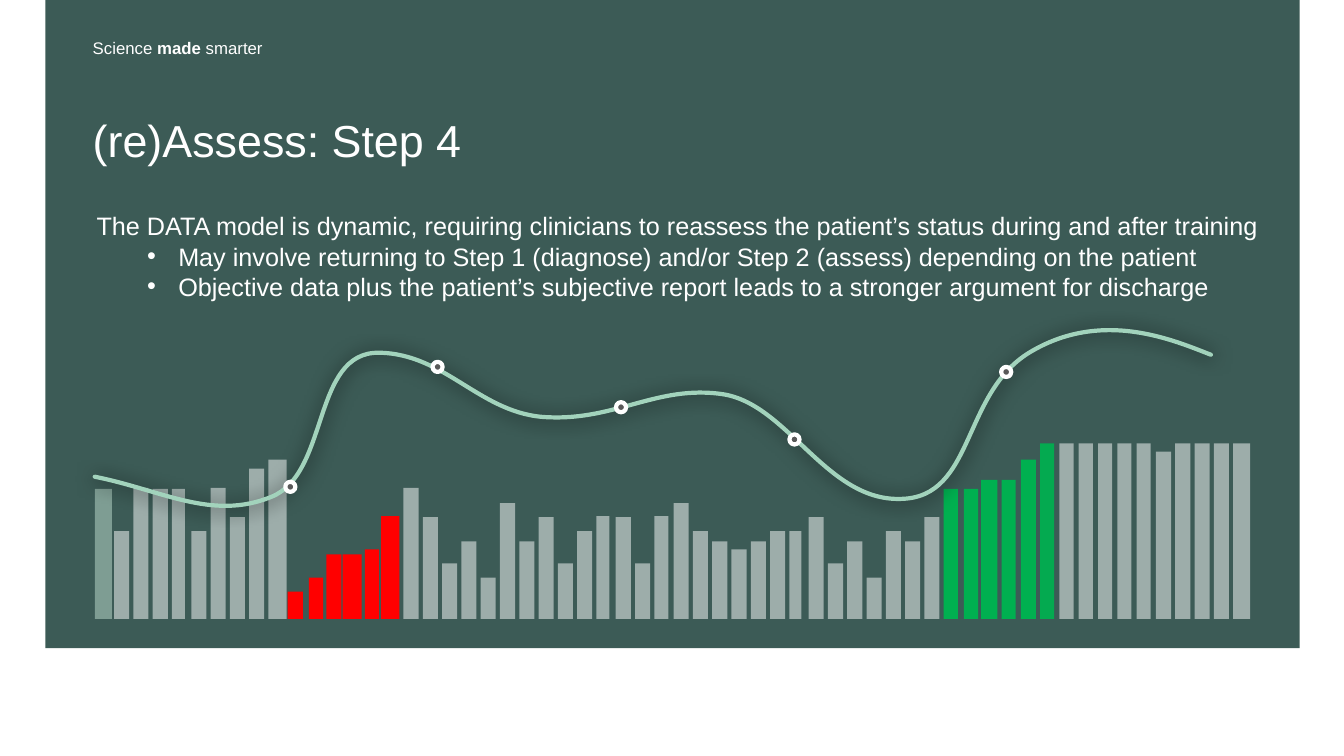
from lxml import etree
from pptx import Presentation
from pptx.dml.color import RGBColor
from pptx.enum.shapes import MSO_SHAPE
from pptx.enum.text import MSO_ANCHOR, MSO_AUTO_SIZE
from pptx.oxml import parse_xml
from pptx.oxml.ns import nsdecls, qn
from pptx.util import Inches, Pt

RECT, OVAL = MSO_SHAPE.RECTANGLE, MSO_SHAPE.OVAL
TOP, MIDDLE = MSO_ANCHOR.TOP, MSO_ANCHOR.MIDDLE
FIT_SHAPE = MSO_AUTO_SIZE.SHAPE_TO_FIT_TEXT

WHITE = RGBColor(0xFF, 0xFF, 0xFF)
DARK_GREEN = RGBColor(0x3C, 0x5B, 0x56)
PALE_GREEN = RGBColor(0xC0, 0xE0, 0xD0)
MINT = RGBColor(0xA2, 0xD3, 0xBC)
RED = RGBColor(0xFF, 0x00, 0x00)
GREEN = RGBColor(0x00, 0xB0, 0x50)
GREY = RGBColor(0x59, 0x59, 0x59)

prs = Presentation()
prs.slide_width, prs.slide_height = Inches(13.33), Inches(7.5)
s = prs.slides.add_slide(prs.slide_layouts[6])


def add_shape(shapes, kind, x, y, w, h, color, opacity=100):
    sp = shapes.add_shape(kind, Inches(x), Inches(y), Inches(w), Inches(h))
    sp.shadow.inherit = False
    sp.fill.solid()
    sp.fill.fore_color.rgb = color
    sp.line.fill.background()
    if opacity < 100:
        clr = sp.fill._xPr.find(qn("a:solidFill"))[0]
        etree.SubElement(clr, qn("a:alpha")).set("val", str(opacity * 1000))
    return sp


def add_text(x, y, w, h, lines, size, inset=0, anchor=TOP, spacing=None):
    """Each line is a list of (text, bold) runs."""
    tf = s.shapes.add_textbox(Inches(x), Inches(y), Inches(w), Inches(h)).text_frame
    tf.word_wrap = True
    tf.vertical_anchor = anchor
    tf.margin_left = tf.margin_right = Inches(inset)
    tf.margin_top = tf.margin_bottom = Inches(inset / 2)
    for i, line in enumerate(lines):
        p = tf.paragraphs[0] if i == 0 else tf.add_paragraph()
        p.line_spacing = spacing
        for text, bold in line:
            r = p.add_run()
            r.text = text
            r.font.name, r.font.size, r.font.bold = "Arial", Pt(size), bold
            r.font.color.rgb = WHITE
    return tf


# Background panel
add_shape(s.shapes, RECT, 0.45, 0, 12.44, 6.43, DARK_GREEN)

# Tagline and title
add_text(0.92, 0.39, 1.73, 0.2,
         [[("Science ", False), ("made ", True), ("smarter", False)]],
         12, anchor=MIDDLE, spacing=0.9)
add_text(0.92, 1.18, 11.5, 0.45, [[("(re)Assess: Step 4", False)]], 32, spacing=0.9)

# Body text with two bullets
body = [
    "The DATA model is dynamic, requiring clinicians to reassess the patient’s status during and after training",
    "May involve returning to Step 1 (diagnose) and/or Step 2 (assess) depending on the patient",
    "Objective data plus the patient’s subjective report leads to a stronger argument for discharge",
]
tf = add_text(0.86, 2.04, 11.89, 1.01, [[(text, False)] for text in body], 18, inset=0.1)
tf.auto_size = FIT_SHAPE
for p in tf.paragraphs[1:]:
    p.level = 1
    pPr = p._p.get_or_add_pPr()
    pPr.set("marL", str(Inches(0.81)))
    pPr.set("indent", str(Inches(-0.31)))
    etree.SubElement(pPr, qn("a:buFont")).set("typeface", "Arial")
    etree.SubElement(pPr, qn("a:buChar")).set("char", "•")

# Bars: evenly spaced on one baseline, as (colour, opacity, tops)
BASELINE, FIRST_X, LAST_X, LAST_BAR, BAR_W = 6.14, 0.94, 12.23, 59, 0.15
STEP = (LAST_X - FIRST_X) / LAST_BAR
bar_runs = [
    (PALE_GREEN, 50, [4.85]),
    (WHITE, 50, [5.27, 4.84, 4.85, 4.85, 5.27, 4.84, 5.13, 4.65, 4.56]),
    (RED, 100, [5.87, 5.73, 5.5, 5.5, 5.45, 5.12]),
    (WHITE, 50, [4.84, 5.13, 5.59, 5.37, 5.73, 4.99, 5.37, 5.13, 5.59, 5.27,
                 5.12, 5.13, 5.59, 5.12, 4.99, 5.27, 5.37, 5.45, 5.37, 5.27,
                 5.27, 5.13, 5.59, 5.37, 5.73, 5.27, 5.37, 5.13]),
    (GREEN, 100, [4.85, 4.85, 4.76, 4.76, 4.56]),
    (GREEN, 93, [4.4]),
    (WHITE, 50, [4.4] * 5 + [4.48] + [4.4] * 4),
]
bar_widths = {0: 0.17, 4: 0.13, 9: 0.18, 11: 0.14, 13: 0.19, 14: 0.14, 15: 0.18,
              26: 0.13, 29: 0.14, 36: 0.12, 44: 0.14, 45: 0.14, 46: 0.16, 47: 0.14,
              49: 0.14, 50: 0.14, 51: 0.14, 52: 0.14, 53: 0.14, 54: 0.14, 59: 0.17}
bar_shifts = {11: 0.02, 13: -0.03, 15: -0.03, 45: 0.01, 46: -0.01}
bars = s.shapes.add_group_shape()
i = 0
for color, opacity, tops in bar_runs:
    for top in tops:
        x = FIRST_X + STEP * i + bar_shifts.get(i, 0)
        add_shape(bars.shapes, RECT, x, top, bar_widths.get(i, BAR_W),
                  BASELINE - top, color, opacity)
        i += 1

# Curve: every three points after the first make one cubic segment
curve_points = [
    (0.94, 4.73),
    (1.6, 4.86), (2.1, 5.17), (2.69, 4.93),
    (3.27, 4.7), (3.09, 3.49), (3.76, 3.5),
    (4.43, 3.51), (4.77, 4.12), (5.44, 4.14),
    (6.11, 4.17), (6.52, 3.82), (7.16, 3.91),
    (7.81, 4), (8.19, 4.97), (8.93, 4.95),
    (9.68, 4.94), (9.53, 3.88), (10.24, 3.48),
    (10.95, 3.07), (11.65, 3.38), (12.01, 3.52),
]
CURVE_TOP, CURVE_H = Inches(3.28), Inches(1.74)
knots = [(Inches(x), Inches(y)) for x, y in curve_points]
builder = s.shapes.build_freeform(*knots[0])
builder.add_line_segments(knots[1:], close=False)
curve = builder.convert_to_shape()

# Join the points into curves and fit the frame to the visible line
outline = next(curve._element.iter(qn("a:path")))
drop = CURVE_TOP - curve.top
for pt in outline.iter(qn("a:pt")):
    pt.set("y", str(int(pt.get("y")) - drop))
lines = outline.findall(qn("a:lnTo"))
for first in range(0, len(lines), 3):
    bezier = etree.SubElement(outline, qn("a:cubicBezTo"))
    for line in lines[first:first + 3]:
        bezier.append(line[0])
        outline.remove(line)
outline.set("h", str(CURVE_H))
curve.top, curve.height = CURVE_TOP, CURVE_H

curve.fill.background()
curve.line.color.rgb = MINT
curve.line.width = Pt(3)
ln = curve.line._get_or_add_ln()
ln.set("cap", "rnd")
etree.SubElement(ln, qn("a:round"))
curve._element.spPr.append(parse_xml(
    f'<a:effectLst {nsdecls("a")}><a:outerShdw blurRad="{Pt(14)}" dist="0" dir="18900000">'
    '<a:srgbClr val="000000"><a:alpha val="75000"/></a:srgbClr></a:outerShdw></a:effectLst>'))

# Markers on the curve
for x, y in [(2.83, 4.78), (4.29, 3.59), (6.11, 3.99), (7.83, 4.31), (9.93, 3.64)]:
    marker = add_shape(s.shapes, OVAL, x, y, 0.1, 0.1, GREY)
    marker.line.color.rgb = WHITE
    marker.line.width = Pt(3)

prs.save("out.pptx")
